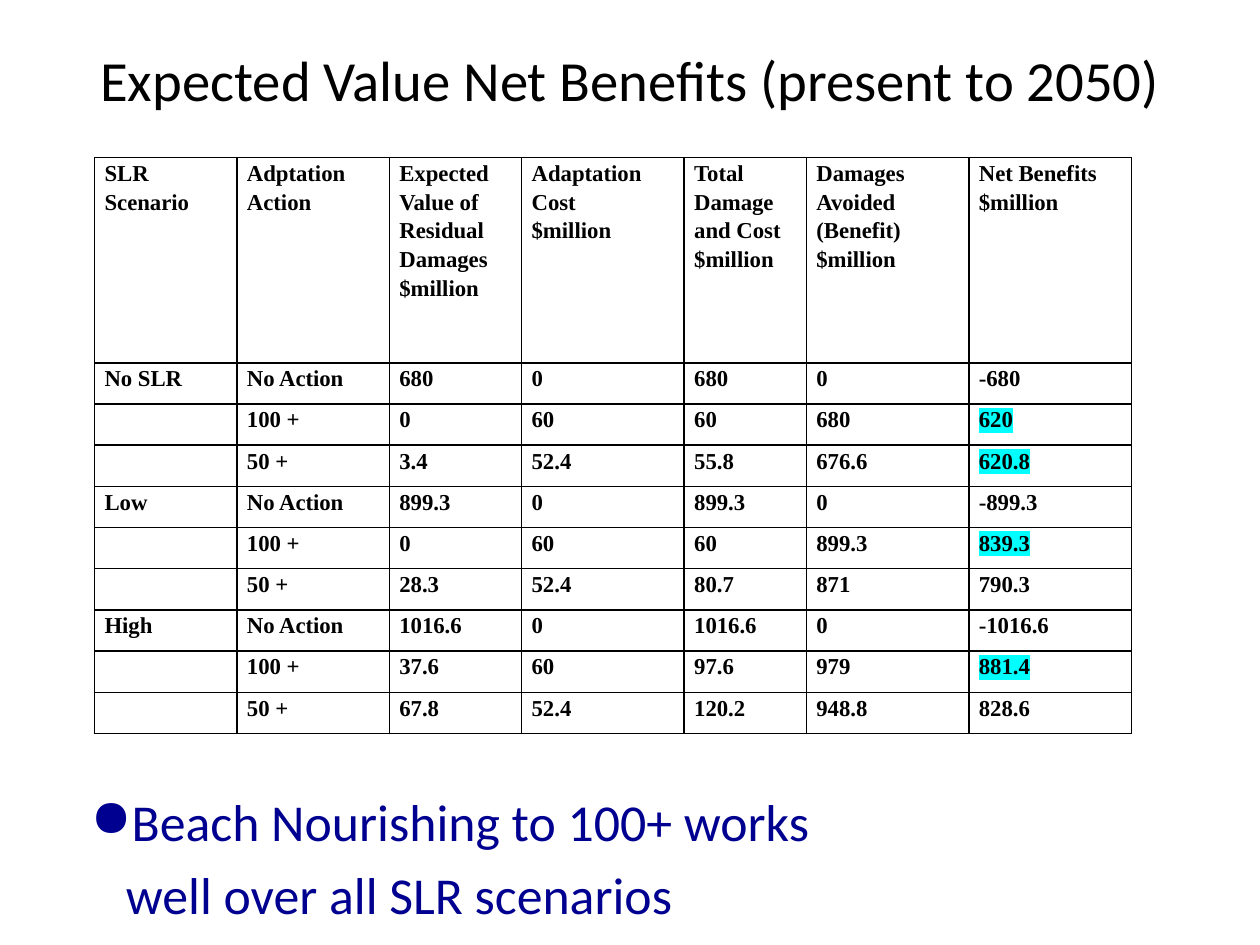
from dataclasses import dataclass

from lxml import etree
from pptx import Presentation, util as u
from pptx.dml.color import RGBColor
from pptx.enum import text as t
from pptx.oxml.ns import qn


@dataclass(frozen=True)
class Theme:
    black: str = "000000"
    navy: str = "000090"
    cyan: str = "00FFFF"
    sans: str = "Calibri"
    serif: str = "Times New Roman"
    title: float = 32.4
    body: float = 29.6
    cell: float = 13


HEAD = [
    "SLR\nScenario",
    "Adptation\nAction",
    "Expected Value of Residual\nDamages\n$million",
    "Adaptation Cost\n$million",
    "Total Damage and Cost\n$million",
    "Damages Avoided\n(Benefit)\n$million",
    "Net Benefits\n$million",
]
ROWS = [
    ["No SLR", "No Action", "680", "0", "680", "0", "-680"],
    ["", "100 +", "0", "60", "60", "680", "620"],
    ["", "50 +", "3.4", "52.4", "55.8", "676.6", "620.8"],
    ["Low", "No Action", "899.3", "0", "899.3", "0", "-899.3"],
    ["", "100 +", "0", "60", "60", "899.3", "839.3"],
    ["", "50 +", "28.3", "52.4", "80.7", "871", "790.3"],
    ["High", "No Action", "1016.6", "0", "1016.6", "0", "-1016.6"],
    ["", "100 +", "37.6", "60", "97.6", "979", "881.4"],
    ["", "50 +", "67.8", "52.4", "120.2", "948.8", "828.6"],
]
BEST = {"620", "620.8", "839.3", "881.4"}
WIDTHS = [11.3, 12.1, 10.5, 12.9, 9.7, 12.9, 12.9]
HEIGHTS = [16.3] + [3.27] * len(ROWS)


def put(obj, form):
    for key, val in form.items():
        setattr(obj, key, val)


def node(up, tag, **attrs):
    return etree.SubElement(up, qn(tag), attrs)


class Deck:
    """Holds the theme and the slide, on a grid of 100 columns by 75 rows."""

    def __init__(self, theme):
        self.theme = theme
        self.show = Presentation()
        put(self.show, {"slide_width": u.Inches(10), "slide_height": u.Inches(7.5)})
        self.slide = self.show.slides.add_slide(self.show.slide_layouts[6])

    def grid(self, *cells):
        return [round(n * self.show.slide_width / 100) for n in cells]

    def style(self, par, size, face, color, bold=False):
        for run in par.runs:
            put(run.font, {"size": u.Pt(size), "name": face, "bold": bold})
            run.font.color.rgb = RGBColor.from_string(color)

    def box(self, area, words, anchor):
        frame = self.slide.shapes.add_textbox(*self.grid(*area)).text_frame
        put(frame, {"word_wrap": True, "vertical_anchor": anchor, "text": words})
        return frame.paragraphs

    def title(self, area, words):
        th = self.theme
        par = self.box(area, words, t.MSO_ANCHOR.MIDDLE)[0]
        par.alignment = t.PP_ALIGN.CENTER
        self.style(par, th.title, th.sans, th.black)

    def point(self, area, words):
        """Bulleted first line; later lines align under its text."""
        th = self.theme
        for i, par in enumerate(self.box(area, words, t.MSO_ANCHOR.TOP)):
            par.space_before = u.Pt(th.body * 0.2)
            self.style(par, th.body, th.sans, th.navy)
            props = par._p.get_or_add_pPr()
            props.set("marL", str(u.Inches(0.28 if i else 0.3)))
            props.set("indent", str(0 if i else -u.Inches(0.3)))
            if i:
                node(props, "a:buNone")
            else:
                node(props, "a:buChar", char="●")

    def table(self, left, top, rows, wide, high):
        area = self.grid(left, top, sum(wide), sum(high))
        grid = self.slide.shapes.add_table(len(rows), len(wide), *area).table
        put(grid, {"first_row": False, "horz_banding": False})
        for col, size in zip(grid.columns, self.grid(*wide)):
            col.width = size
        for row, size, words in zip(grid.rows, self.grid(*high), rows):
            row.height = size
            for cell, word in zip(row.cells, words):
                self.fill(cell, word)

    def fill(self, cell, word):
        th = self.theme
        side = u.Inches(0.08)
        put(cell, {"text": word, "margin_left": side, "margin_right": side,
                   "margin_top": 0, "margin_bottom": 0})
        for par in cell.text_frame.paragraphs if word else ():
            par.line_spacing = 1.15
            self.style(par, th.cell, th.serif, th.black, True)
            if word in BEST:
                self.mark(par.runs[0])
        self.edge(cell)

    def mark(self, run):
        light = etree.Element(qn("a:highlight"))
        node(light, "a:srgbClr", val=self.theme.cyan)
        run._r.rPr.find(qn("a:solidFill")).addnext(light)

    def edge(self, cell):
        props = cell._tc.get_or_add_tcPr()
        for side in "LRTB":
            line = node(props, f"a:ln{side}", w=str(u.Pt(1)))
            node(node(line, "a:solidFill"), "a:srgbClr", val=self.theme.black)
        cell.fill.background()


def main():
    deck = Deck(Theme())
    deck.title((5, 0, 90, 12.5), "Expected Value Net Benefits (present to 2050)")
    deck.point((6.2, 62.2, 92.9, 10.3),
               "Beach Nourishing to 100+ works\nwell over all SLR scenarios")
    deck.table(7.5, 12.5, [HEAD, *ROWS], WIDTHS, HEIGHTS)
    deck.show.save("out.pptx")


if __name__ == "__main__":
    main()
